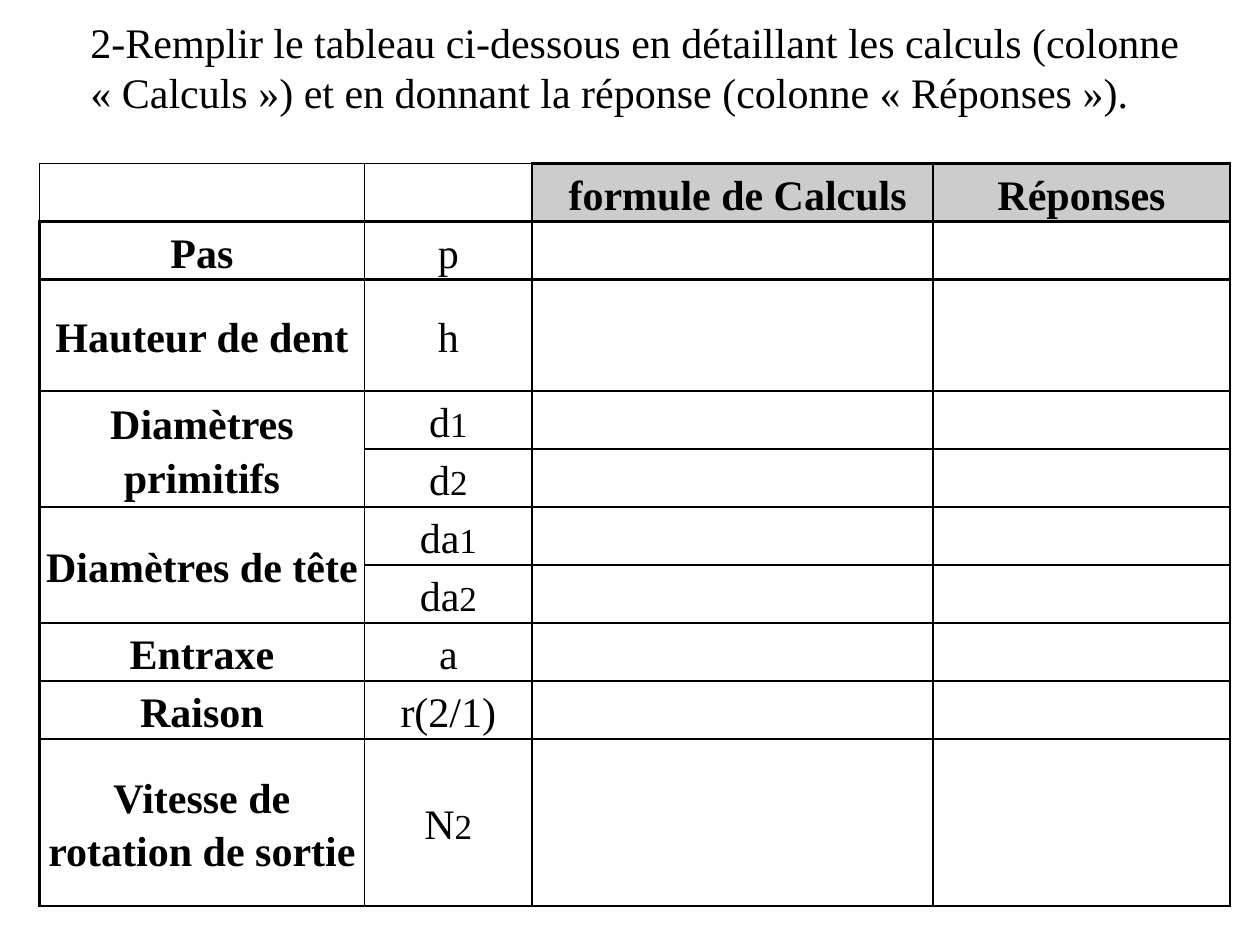
from dataclasses import dataclass

from lxml.etree import SubElement
from pptx import Presentation
from pptx.dml.color import RGBColor
from pptx.enum.text import MSO_ANCHOR, MSO_AUTO_SIZE, PP_ALIGN
from pptx.oxml.ns import qn
from pptx.util import Pt


@dataclass(frozen=True)
class Theme:
    font: str = "Times New Roman"
    ink: str = "000000"
    header: str = "CCCCCC"
    body_size: float = 24
    index_size: float = 20
    line_spacing: float = 1.15
    thin: float = 1
    thick: float = 1.5


class SlideBuilder:
    def __init__(self, deck, theme):
        self.theme = theme
        self.page = deck.slides.add_slide(deck.slide_layouts[6])

    def format_span(self, span, size, bold=False):
        span.font.name = self.theme.font
        span.font.size = Pt(size)
        span.font.bold = bold
        span.font.color.rgb = RGBColor.from_string(self.theme.ink)

    def text(self, left, top, width, height, words):
        box = self.page.shapes.add_textbox(Pt(left), Pt(top), Pt(width), Pt(height))
        frame = box.text_frame
        frame.word_wrap = True
        frame.auto_size = MSO_AUTO_SIZE.SHAPE_TO_FIT_TEXT
        frame.text = words
        self.format_span(frame.paragraphs[0].runs[0], self.theme.body_size)

    def table(self, left, top, column_widths, row_heights):
        frame = self.page.shapes.add_table(
            len(row_heights), len(column_widths), Pt(left), Pt(top),
            Pt(sum(column_widths)), Pt(sum(row_heights)))
        table = frame.table
        table.first_row = False
        table.horz_banding = False
        for column, width in zip(table.columns, column_widths):
            column.width = Pt(width)
        for row, height in zip(table.rows, row_heights):
            row.height = Pt(height)
        return table

    def cell_text(self, cell, words, index="", bold=False):
        cell.vertical_anchor = MSO_ANCHOR.MIDDLE
        cell.margin_left = cell.margin_right = Pt(3.6)
        cell.margin_top = cell.margin_bottom = 0
        cell.text_frame.text = words
        para = cell.text_frame.paragraphs[0]
        para.alignment = PP_ALIGN.CENTER
        para.line_spacing = self.theme.line_spacing
        self.format_span(para.runs[0], self.theme.body_size, bold)
        if index:
            span = para.add_run()
            span.text = index
            self.format_span(span, self.theme.index_size, bold)

    def cell_style(self, cell, left, right, top, bottom, fill=None):
        properties = cell._tc.get_or_add_tcPr()
        sides = {"a:lnL": left, "a:lnR": right, "a:lnT": top, "a:lnB": bottom}
        for side, width in sides.items():
            line = SubElement(properties, qn(side), w=str(Pt(width)))
            paint = SubElement(line, qn("a:solidFill"))
            SubElement(paint, qn("a:srgbClr"), val=self.theme.ink)
        if fill:
            cell.fill.solid()
            cell.fill.fore_color.rgb = RGBColor.from_string(fill)
        else:
            cell.fill.background()


HEADINGS = {2: " formule de Calculs", 3: "Réponses"}
QUANTITIES = [
    ("Pas", [("p", "")]),
    ("Hauteur de dent", [("h", "")]),
    ("Diamètres primitifs", [("d", "1"), ("d", "2")]),
    ("Diamètres de tête", [("da", "1"), ("da", "2")]),
    ("Entraxe", [("a", "")]),
    ("Raison", [("r(2/1)", "")]),
    ("Vitesse de rotation de sortie", [("N", "2")]),
]
ROW = 31.8
COLUMN_WIDTHS = [185.8, 95.8, 229, 169.9]
ROW_HEIGHTS = [ROW, ROW, 2 * ROW] + [ROW] * 6 + [3 * ROW]


def main():
    deck = Presentation()
    deck.slide_width, deck.slide_height = Pt(720), Pt(540)
    theme = Theme()
    slide = SlideBuilder(deck, theme)
    slide.text(44.6, 5.8, 641.5, 65.5,
               "2-Remplir le tableau ci-dessous en détaillant les calculs (colonne "
               "« Calculs ») et en donnant la réponse (colonne « Réponses »).")
    table = slide.table(22.5, 93.5, COLUMN_WIDTHS, ROW_HEIGHTS)

    for column, heading in HEADINGS.items():
        slide.cell_text(table.cell(0, column), heading, bold=True)
    row = 1
    for name, symbols in QUANTITIES:
        if len(symbols) > 1:
            table.cell(row, 0).merge(table.cell(row + len(symbols) - 1, 0))
        slide.cell_text(table.cell(row, 0), name, bold=True)
        for symbol, index in symbols:
            slide.cell_text(table.cell(row, 1), symbol, index)
            row += 1

    for row in range(len(ROW_HEIGHTS)):
        for column in range(len(COLUMN_WIDTHS)):
            corner = row == 0 and column < 2
            slide.cell_style(
                table.cell(row, column),
                left=theme.thin if corner or column == 1 else theme.thick,
                right=theme.thin if column == 0 else theme.thick,
                top=theme.thin if corner else theme.thick,
                bottom=theme.thick,
                fill=theme.header if row == 0 and column in HEADINGS else None)
    deck.save("out.pptx")


if __name__ == "__main__":
    main()
